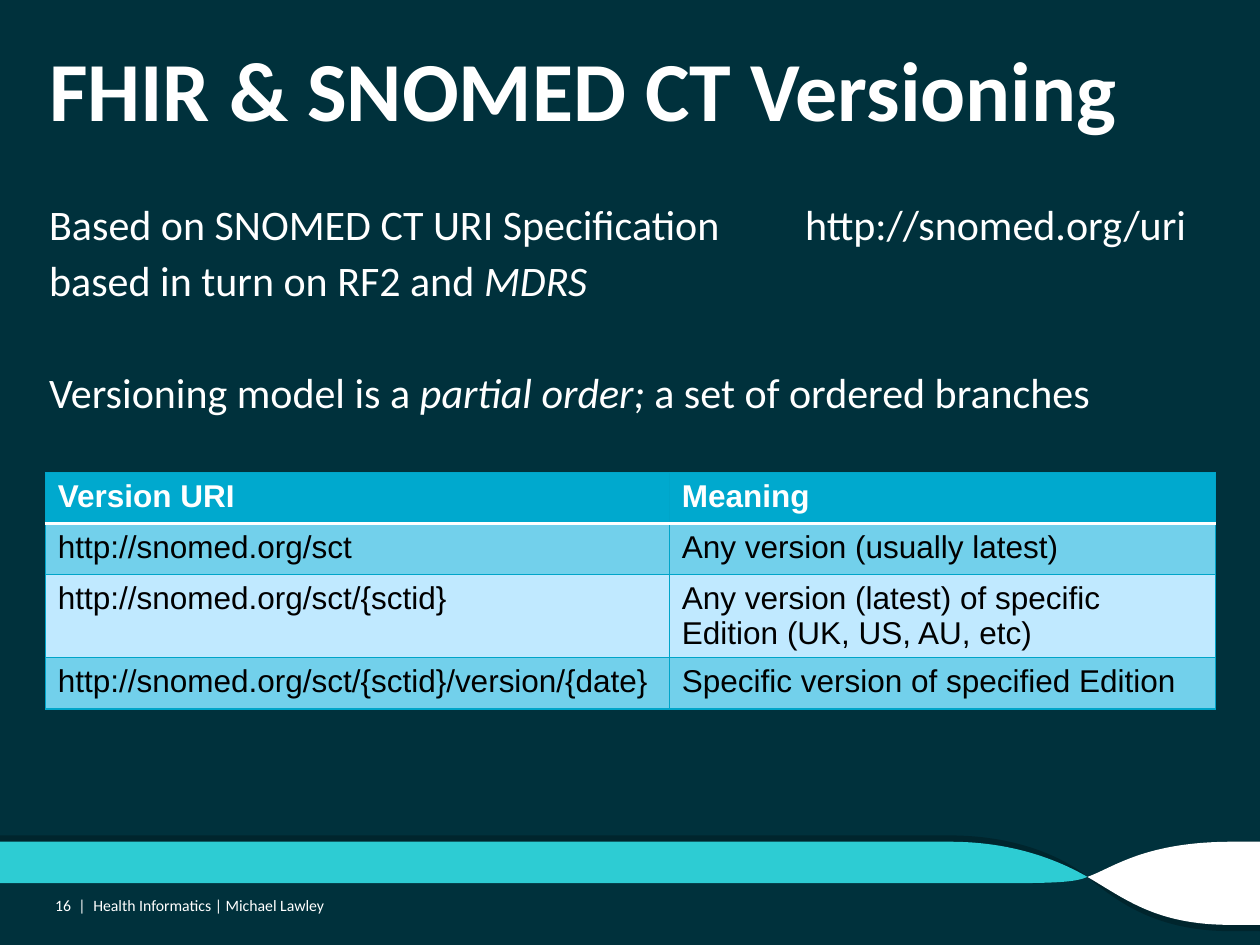
from pptx import Presentation
from pptx.dml.color import RGBColor
from pptx.enum.text import MSO_ANCHOR, MSO_AUTO_SIZE, PP_ALIGN
from pptx.oxml import parse_xml
from pptx.oxml.ns import nsdecls, qn
from pptx.util import Pt

# Content
TITLE = "FHIR & SNOMED CT Versioning"
# Each paragraph: space before, then (text, italic) runs
BODY = [
    (0, [("Based on SNOMED CT URI Specification\thttp://snomed.org/uri", False)]),
    (6, [("based in turn on RF2 and ", False), ("MDRS", True)]),
    (38.4, [("Versioning model is a ", False), ("partial order;", True),
            (" a set of ordered branches", False)]),
]
ROWS = [
    ("Version URI", "Meaning"),
    ("http://snomed.org/sct", "Any version (usually latest)"),
    ("http://snomed.org/sct/{sctid}",
     "Any version (latest) of specific Edition (UK, US, AU, etc)"),
    ("http://snomed.org/sct/{sctid}/version/{date}",
     "Specific version of specified Edition"),
]
FOOT = [
    ("Health Informatics | Michael Lawley", 53.3, 478.8, PP_ALIGN.LEFT),
    ("16  |", 25.9, 23, PP_ALIGN.RIGHT),
]
LEFT, TAB = 28.1, 432
WIDTHS = [356.6, 311.9]
HEIGHTS = [29.2, 29.2, 47.4, 29.2]
FILLS = ["00A9CE", "72D0EB", "C0E9FF", "72D0EB"]
EDGE = "00A5C9"
WHITE = "FFFFFF"
DARK = "00252D"

# Ribbon outlines: a pair is a line end, six numbers are a Bezier curve
KNOT = (621.4, 501.1)
TAIL = (604.8, 504.7, 614.9, 504, *KNOT)
RISE = (653.8, 481, 635.8, 496.1, *KNOT)
BANDS = [
    (DARK, [[(720, 481), (704.2, 481), RISE, (720, 501.1), (720, 532.1)],
            [(542.9, 477.4), (0, 477.4), (0, 501.1), KNOT,
             (604.8, 487.5, 576.7, 477.4, 542.9, 477.4)]]),
    (DARK, [[KNOT, (0, 501.1), (0, 504.7), (572.4, 504.7), TAIL],
            [(720, 501.1), KNOT, (638.6, 515.5, 661, 532.1, 703.4, 532.1),
             (720, 532.1)]]),
    ("2DCCD3", [[KNOT, (602.6, 490.3, 576.7, 481, 542.9, 481), (0, 481),
                 (0, 504.7), (572.4, 504.7), TAIL]]),
    (WHITE, [[(704.2, 481), RISE, (643.7, 514.1, 661, 528.5, 703.4, 528.5),
              (720, 528.5), (720, 481)]]),
]


def rgb(code):
    return RGBColor.from_string(code)


def style(para, size, color=WHITE, bold=False, face="Calibri"):
    font = para.font
    font.name, font.size, font.bold = face, Pt(size), bold
    font.color.rgb = rgb(color)


def setup(frame, anchor=MSO_ANCHOR.TOP):
    frame.margin_left = frame.margin_right = 0
    frame.margin_top = frame.margin_bottom = 0
    frame.word_wrap = True
    frame.auto_size = MSO_AUTO_SIZE.NONE
    frame.vertical_anchor = anchor
    return frame


def add_text(left, top, width, height, anchor=MSO_ANCHOR.TOP):
    box = slide.shapes.add_textbox(Pt(left), Pt(top), Pt(width), Pt(height))
    return setup(box.text_frame, anchor)


def pairs(part):
    """Split a part into points, in tenths of a point."""
    return [(x * 10, y * 10) for x, y in zip(part[::2], part[1::2])]


def add_band(color, loops):
    pen = None
    for loop in loops:
        start = pairs(loop[0])[0]
        if pen:
            pen.move_to(*start)
        else:
            pen = slide.shapes.build_freeform(*start, scale=Pt(0.1))
        pen.add_line_segments([spot for part in loop[1:] for spot in pairs(part)],
                              close=True)
    band = pen.convert_to_shape()
    band.shadow.inherit = False
    band.fill.solid()
    band.fill.fore_color.rgb = rgb(color)
    band.line.fill.background()
    # Join the three points of each curve into one Bezier
    lines = iter(list(band._element.iter(qn("a:lnTo"))))
    for part in [part for loop in loops for part in loop[1:]]:
        group = [next(lines) for _ in pairs(part)]
        if len(group) == 3:
            curve = parse_xml(f'<a:cubicBezTo {nsdecls("a")}/>')
            group[0].addprevious(curve)
            for line in group:
                curve.append(line[0])
                line.getparent().remove(line)


def add_edge(cell, side, color, width):
    cell._tc.get_or_add_tcPr().append(parse_xml(
        f'<a:ln{side} {nsdecls("a")} w="{Pt(width)}"><a:solidFill>'
        f'<a:srgbClr val="{color}"/></a:solidFill></a:ln{side}>'))


# Slide and ribbon
deck = Presentation()
deck.slide_width, deck.slide_height = Pt(720), Pt(540)
slide = deck.slides.add_slide(deck.slide_layouts[5])
slide.background.fill.solid()
slide.background.fill.fore_color.rgb = rgb("00313C")
for color, loops in BANDS:
    add_band(color, loops)

# Title
title = slide.shapes.title
title.left, title.top, title.width, title.height = Pt(LEFT), Pt(21.6), Pt(666), Pt(67)
para = setup(title.text_frame).paragraphs[0]
para.text = TITLE
para.alignment = PP_ALIGN.LEFT
style(para, 48, bold=True)

# Body text
frame = add_text(LEFT, 116.6, 666, 342.7)
for i, (gap, runs) in enumerate(BODY):
    para = frame.add_paragraph() if i else frame.paragraphs[0]
    para.line_spacing = 0.9
    para.space_before = Pt(gap)
    if not i:
        para._p.get_or_add_pPr().append(parse_xml(
            f'<a:tabLst {nsdecls("a")}><a:tab pos="{Pt(TAB)}" algn="l"/></a:tabLst>'))
    style(para, 24)
    for text, slant in runs:
        run = para.add_run()
        run.text = text
        if slant:
            run.font.italic = True

# Footer
for text, left, width, align in FOOT:
    para = add_text(left, 512, width, 10, MSO_ANCHOR.MIDDLE).paragraphs[0]
    para.text = text
    para.alignment = align
    style(para, 9)

# Version table
table = slide.shapes.add_table(len(ROWS), len(WIDTHS), Pt(25.9), Pt(270),
                               Pt(sum(WIDTHS)), Pt(sum(HEIGHTS))).table
for col, width in zip(table.columns, WIDTHS):
    col.width = Pt(width)
for i, (row, texts) in enumerate(zip(table.rows, ROWS)):
    row.height = Pt(HEIGHTS[i])
    for cell, text in zip(row.cells, texts):
        for side in "LRTB":
            rule = (i, side) in ((0, "B"), (1, "T"))
            add_edge(cell, side, *((WHITE, 2) if rule else (EDGE, 0.75)))
        cell.fill.solid()
        cell.fill.fore_color.rgb = rgb(FILLS[i])
        para = cell.text_frame.paragraphs[0]
        para.text = text
        style(para, 18, "000000" if i else WHITE, bold=i == 0, face="Arial")

deck.save("out.pptx")
